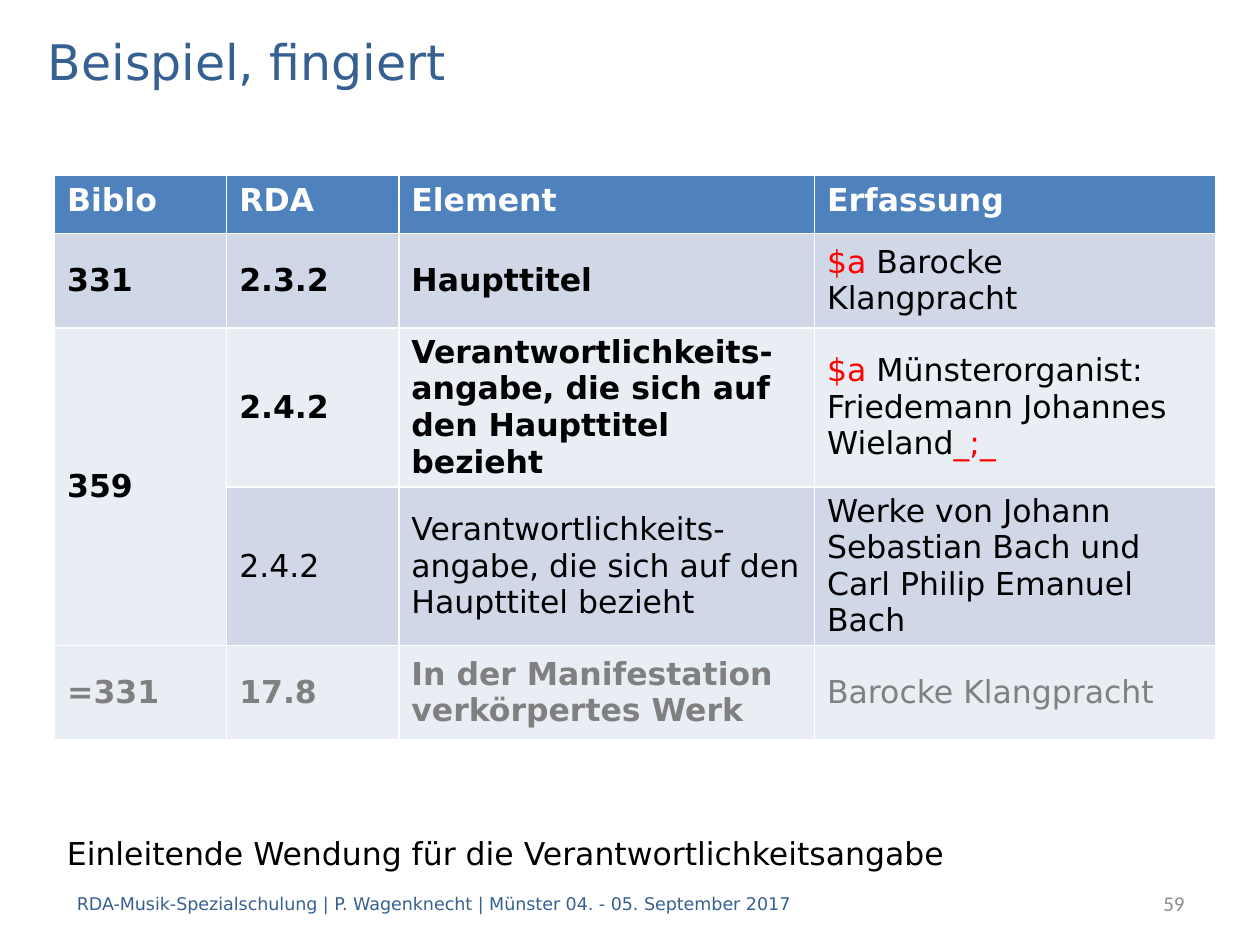
import pptx
import pptx.util
import pptx.dml.color
import pptx.enum.text

Cm = pptx.util.Cm
Pt = pptx.util.Pt
ALIGN = pptx.enum.text.PP_ALIGN
MID = pptx.enum.text.MSO_ANCHOR.MIDDLE

HUES = {
    "white": "FFFFFF", "black": "000000", "red": "FF0000", "gray": "808080",
    "pale": "8C8C8C", "navy": "376092", "head": "4F81BD",
    "dark": "D0D8E8", "light": "E9EDF4",
}
FACE = "DejaVu Sans"
CLAIM = "Verantwortlichkeits-angabe, die sich auf den Haupttitel bezieht"
HEADS = ["Biblo", "RDA", "Element", "Erfassung"]
ROWS = [
    ("black", True, ["331", "2.3.2", "Haupttitel",
                     [("$a", "red"), (" Barocke Klangpracht", "black")]]),
    ("black", True, ["359", "2.4.2", CLAIM,
                     [("$a", "red"),
                      (" Münsterorganist: Friedemann Johannes Wieland", "black"),
                      ("_;_", "red")]]),
    ("black", False, ["", "2.4.2", CLAIM,
                      "Werke von Johann Sebastian Bach und Carl Philip Emanuel Bach"]),
    ("gray", True, ["=331", "17.8", "In der Manifestation verkörpertes Werk",
                    "Barocke Klangpracht"]),
]


def tint(hue):
    return pptx.dml.color.RGBColor.from_string(HUES[hue])


class Deck:
    def __init__(self):
        self.file = pptx.Presentation()
        self.file.slide_width = Cm(25.4)
        self.file.slide_height = Cm(19.05)
        self.slide = self.file.slides.add_slide(self.file.slide_layouts[5])

    def prose(self, frame, text, size, hue, bold=False, align=ALIGN.LEFT, face=FACE):
        line = frame.paragraphs[0]
        line.alignment = align
        font = line.font
        font.size, font.name, font.bold = Pt(size), face, bold
        if isinstance(text, str):
            line.text = text
            font.color.rgb = tint(hue)
        else:
            for part, shade in text:
                run = line.add_run()
                run.text = part
                run.font.color.rgb = tint(shade)
        return line

    def title(self, text, left, top, width, height):
        shape = self.slide.shapes.title
        shape.left, shape.top = Cm(left), Cm(top)
        shape.width, shape.height = Cm(width), Cm(height)
        shape.text_frame.vertical_anchor = MID
        self.prose(shape.text_frame, text, 28, "navy")

    def label(self, text, left, top, width, height, size, hue, **style):
        box = self.slide.shapes.add_textbox(Cm(left), Cm(top), Cm(width), Cm(height))
        box.text_frame.word_wrap = True
        box.text_frame.vertical_anchor = MID
        self.prose(box.text_frame, text, size, hue, **style)

    def cell(self, cell, text, fill, hue, bold):
        cell.fill.solid()
        cell.fill.fore_color.rgb = tint(fill)
        return self.prose(cell.text_frame, text, 18, hue, bold)

    def table(self, left, top, widths, first, rest):
        shape = self.slide.shapes.add_table(
            len(ROWS) + 1, len(HEADS), Cm(left), Cm(top),
            Cm(sum(widths)), Cm(first + rest * len(ROWS)))
        grid = shape.table
        for col, width in zip(grid.columns, widths):
            col.width = Cm(width)
        for i, row in enumerate(grid.rows):
            row.height = Cm(rest if i else first)
        for j, text in enumerate(HEADS):
            self.cell(grid.cell(0, j), text, "head", "white", True)
        grid.cell(2, 0).merge(grid.cell(3, 0))
        for i, (hue, bold, texts) in enumerate(ROWS, 1):
            fill = "dark" if i % 2 else "light"
            for j, text in enumerate(texts):
                cell = grid.cell(i, j)
                if cell.is_spanned:
                    continue
                cell.vertical_anchor = MID
                line = self.cell(cell, text, fill, hue, bold and j < 3)
                line.space_before = line.space_after = Pt(6)


def main():
    deck = Deck()
    deck.title("Beispiel, fingiert", 0.71, 0.51, 24, 1.42)
    deck.table(1.1, 3.54, [3.47, 3.47, 8.38, 8.08], 1.17, 1.9)
    deck.label("Einleitende Wendung für die Verantwortlichkeitsangabe",
               1.1, 16.48, 24, 1.42, 18, "black")
    deck.label("RDA-Musik-Spezialschulung | P. Wagenknecht | Münster 04. - 05. September 2017",
               1.3, 17.7, 22.2, 1.02, 10, "navy")
    deck.label("59", 20.09, 17.7, 4.04, 1.02, 12, "pale",
               align=ALIGN.RIGHT, face="Calibri")
    deck.file.save("out.pptx")


if __name__ == "__main__":
    main()
